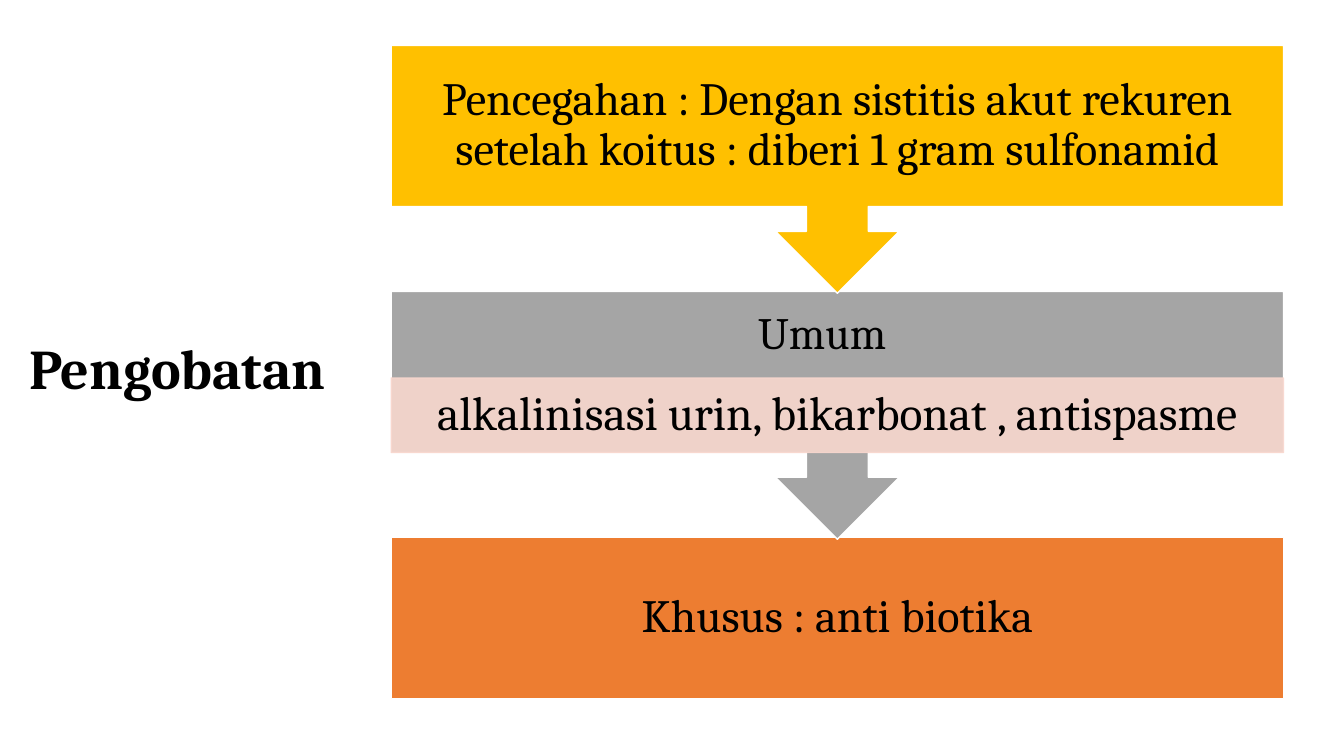
import pptx
import pptx.dml.color
import pptx.enum.shapes
import pptx.enum.text
import pptx.oxml
import pptx.oxml.ns
import pptx.util

PX = 9144
FONT = "Cambria"
COLORS = {
    "text": "000000",
    "outline": "FFFFFF",
    "prevention": "FFC000",
    "general": "A5A5A5",
    "detail": "F8D7CE",
    "specific": "ED7D31",
}
SHAPES = pptx.enum.shapes.MSO_SHAPE
STEP_PITCH = 244
CALLOUT_HEIGHT = 246
BODY_HEIGHT = 160
HEADING_HEIGHT = 87
DETAIL_HEIGHT = 74


def color(name):
    """Return the named colour as an RGB value."""
    return pptx.dml.color.RGBColor.from_string(COLORS[name])


def emu(box):
    """Turn a box in px into EMU lengths."""
    return [length * PX for length in box]


def add_label(slide, box, text, size, insets, centered=True, bold=False):
    """Place one vertically centred paragraph with left, top, right, bottom insets."""
    frame = slide.shapes.add_textbox(*emu(box)).text_frame
    frame.word_wrap = True
    frame.vertical_anchor = pptx.enum.text.MSO_ANCHOR.MIDDLE
    (frame.margin_left, frame.margin_top,
     frame.margin_right, frame.margin_bottom) = emu(insets)
    para = frame.paragraphs[0]
    para.text = text
    para.line_spacing = 0.9
    align = pptx.enum.text.PP_ALIGN
    para.alignment = align.CENTER if centered else align.LEFT
    para.font.name = FONT
    para.font.size = pptx.util.Pt(size)
    para.font.bold = bold
    para.font.color.rgb = color("text")


def add_block(slide, kind, box, fill, outline="outline", rotation=0, opacity=100):
    """Draw one filled and outlined shape."""
    block = slide.shapes.add_shape(kind, *emu(box))
    block.shadow.inherit = False
    block.rotation = rotation
    block.fill.solid()
    block.fill.fore_color.rgb = color(fill)
    block.line.color.rgb = color(outline)
    block.line.width = pptx.util.Pt(1)
    if opacity < 100:
        for tone in block.element.spPr.iter(pptx.oxml.ns.qn("a:srgbClr")):
            alpha = pptx.oxml.parse_xml(
                f'<a:alpha {pptx.oxml.ns.nsdecls("a")} val="{opacity * 1000}"/>')
            tone.append(alpha)


def add_treatment_steps(slide, box):
    """Stack the three treatment steps, joined by callout arrows."""
    left, top, width, height = box
    general_top = top + STEP_PITCH
    specific_top = top + 2 * STEP_PITCH
    detail_top = general_top + HEADING_HEIGHT - 1
    specific_box = (left, specific_top, width, height - 2 * STEP_PITCH)
    detail_box = (left, detail_top, width, DETAIL_HEIGHT)

    add_block(slide, SHAPES.RECTANGLE, specific_box, "specific")
    add_label(slide, specific_box, "Khusus : anti biotika", 33, [26] * 4)

    add_block(slide, SHAPES.UP_ARROW_CALLOUT,
              (left, general_top, width, CALLOUT_HEIGHT), "general", rotation=180)
    add_label(slide, (left, general_top, width, HEADING_HEIGHT),
              "Umum", 32, (25, 25, 55, 25))
    add_block(slide, SHAPES.RECTANGLE, detail_box, "detail", "detail", opacity=90)
    add_label(slide, detail_box, "alkalinisasi urin, bikarbonat , antispasme",
              34, (26, 5, 26, 5))

    add_block(slide, SHAPES.UP_ARROW_CALLOUT,
              (left, top, width, CALLOUT_HEIGHT), "prevention", rotation=180)
    add_label(slide, (left, top, width, BODY_HEIGHT),
              "Pencegahan : Dengan sistitis akut rekuren setelah koitus : "
              "diberi 1 gram sulfonamid", 33, [26] * 4)


def main():
    """Build and save the treatment slide."""
    deck = pptx.Presentation()
    deck.slide_width, deck.slide_height = emu((1333, 750))
    slide = deck.slides.add_slide(deck.slide_layouts[6])
    add_label(slide, (19, 64, 369, 609), "Pengobatan", 40, (10, 5, 10, 5),
              centered=False, bold=True)
    add_treatment_steps(slide, (388, 45, 885, 648))
    deck.save("out.pptx")


if __name__ == "__main__":
    main()
